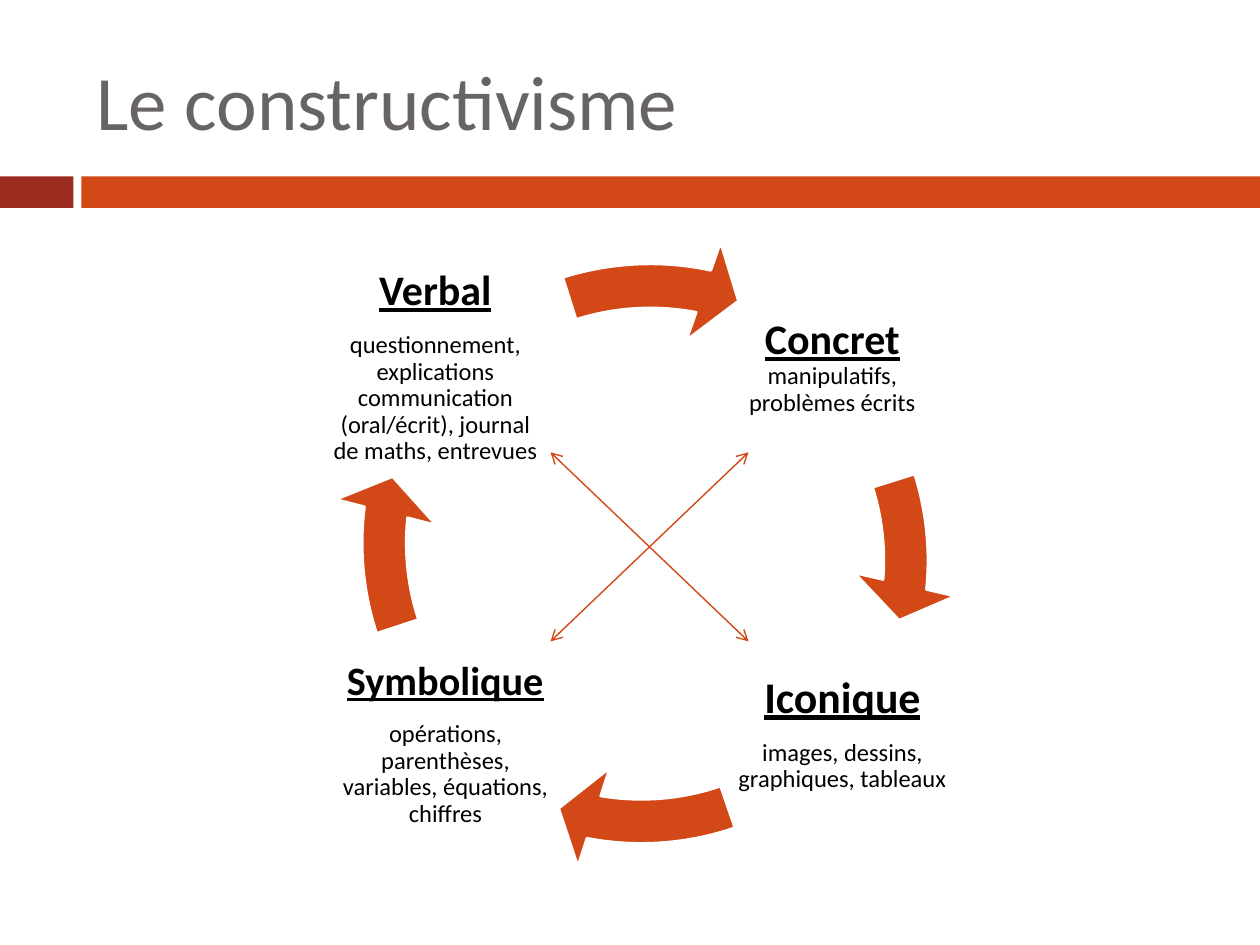
from lxml.etree import SubElement as Sub
from pptx import Presentation
from pptx.dml.color import RGBColor
from pptx.enum.shapes import MSO_CONNECTOR as Conn, MSO_SHAPE as Kind
from pptx.enum.text import MSO_ANCHOR as Anchor, MSO_AUTO_SIZE as Fit, PP_ALIGN as Align
from pptx.oxml.ns import qn
from pptx.util import Pt

RUST = RGBColor(0xD3, 0x48, 0x17)
BRICK = RGBColor(0x9B, 0x2D, 0x1F)
GREY = RGBColor(0x69, 0x64, 0x64)
BLACK = RGBColor(0, 0, 0)
WHITE = RGBColor(255, 255, 255)

SIDE = 129
RING = 364.3

STAGES = [
    ((411.1, 145.4), "Concret", 24, "manipulatifs, problèmes écrits", True,
     (182.9, 138.2), (3.092, 205.563)),
    ((416.9, 355), "Iconique", 25, "images, dessins, graphiques, tableaux", False,
     (184.3, 134.6), (60.137, 42.668)),
    ((190.1, 360.7), "Symbolique", 23,
     "opérations, parenthèses, variables, équations, chiffres", False,
     (190.1, 128.2), (111.977, 97.092)),
    ((184.3, 145.4), "Verbal", 24,
     "questionnement, explications communication (oral/écrit), journal de maths, entrevues",
     False, (189.4, 133.9), (168.916, 151.451)),
]


def apply(item, **vals):
    for key, val in vals.items():
        setattr(item, key, val)


class Board:
    face = "Calibri"
    inset = {f"margin_{side}": Pt(2.2) for side in ("left", "top", "right", "bottom")}

    def __init__(self, deck):
        self.slide = deck.slides.add_slide(deck.slide_layouts[5])
        self.shapes = self.slide.shapes

    def title(self, text, x, y, w, h):
        box = self.shapes.title
        apply(box, left=Pt(x), top=Pt(y), width=Pt(w), height=Pt(h))
        apply(box.text_frame, vertical_anchor=Anchor.MIDDLE, auto_size=Fit.NONE)
        para = box.text_frame.paragraphs[0]
        para.alignment = Align.LEFT
        self.run(para, text, 44, GREY)

    def run(self, para, text, size, color=BLACK, **vals):
        run = para.add_run()
        run.text = text
        apply(run.font, name=self.face, size=Pt(size), **vals)
        run.font.color.rgb = color

    def shape(self, kind, x, y, w, h, fill):
        shape = self.shapes.add_shape(kind, Pt(x), Pt(y), Pt(w), Pt(h))
        shape.shadow.inherit = False
        shape.fill.solid()
        shape.fill.fore_color.rgb = fill
        return shape

    def bar(self, x, w, fill):
        self.shape(Kind.RECTANGLE, x, 100.8, w, 18, fill).line.fill.background()

    def label(self, x, y, head, size, body, inline):
        frame = self.shapes.add_textbox(Pt(x), Pt(y), Pt(SIDE), Pt(SIDE)).text_frame
        apply(frame, word_wrap=True, vertical_anchor=Anchor.MIDDLE, **self.inset)
        para = frame.paragraphs[0]
        self.run(para, head, size, bold=True, underline=True)
        if inline:
            self.run(para, " ", size, bold=True)
        else:
            para = frame.add_paragraph()
        self.run(para, body, 14)
        for para in frame.paragraphs:
            apply(para, alignment=Align.CENTER, line_spacing=0.9,
                  space_after=Pt(round(size * 0.42)))

    def arc(self, x, y, end, start):
        arc = self.shape(Kind.CIRCULAR_ARROW, x, y, RING, RING, RUST)
        arc.line.color.rgb = WHITE
        arc.line.width = Pt(1.5)
        for i, val in enumerate((0.069, 4.658, end, start, 0.081)):
            arc.adjustments[i] = val

    def link(self, x1, y1, x2, y2):
        link = self.shapes.add_connector(Conn.STRAIGHT, Pt(x1), Pt(y1), Pt(x2), Pt(y2))
        link.line.color.rgb = RUST
        link.line.width = Pt(0.79)
        props = link._element.spPr
        line = props.find(qn("a:ln"))
        for end in ("a:headEnd", "a:tailEnd"):
            Sub(line, qn(end), type="arrow")
        Sub(props, qn("a:effectLst"))


def main():
    deck = Presentation()
    apply(deck, slide_width=Pt(720), slide_height=Pt(540))
    board = Board(deck)
    board.bar(0, 42, BRICK)
    board.bar(46.5, 673.5, RUST)
    board.title("Le constructivisme", 48, 18, 662, 78)
    for spot, head, size, body, inline, ring, turn in STAGES:
        board.label(*spot, head, size, body, inline)
        board.arc(*ring, *turn)
    left, top, right, low = 314.6, 258.5, 427.7, 366.5
    board.link(left, top, right, low)
    board.link(left, low, right, top)
    deck.save("out.pptx")


if __name__ == "__main__":
    main()
